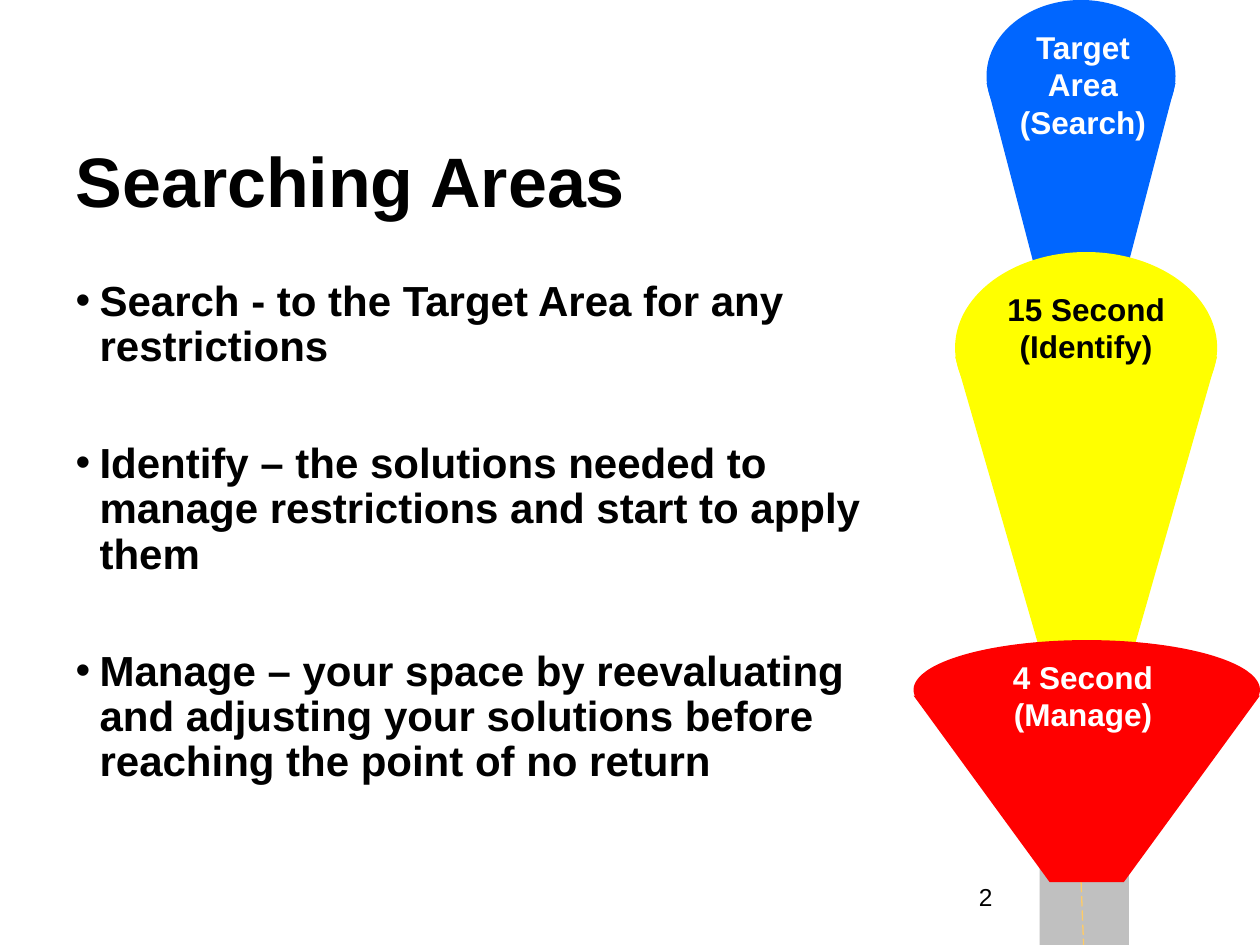
import pptx
import pptx.dml.color
import pptx.enum.dml
import pptx.enum.shapes
import pptx.enum.text
import pptx.oxml.ns
import pptx.util
from lxml import etree
from pptx.util import Inches

RGBColor = pptx.dml.color.RGBColor
BLACK = RGBColor(0x00, 0x00, 0x00)
WHITE = RGBColor(0xFF, 0xFF, 0xFF)
BLUE = RGBColor(0x00, 0x66, 0xFF)
YELLOW = RGBColor(0xFF, 0xFF, 0x00)
RED = RGBColor(0xFF, 0x00, 0x00)
ROAD_GRAY = RGBColor(0xC0, 0xC0, 0xC0)
LANE_ORANGE = RGBColor(0xFF, 0xCC, 0x66)

SHAPE = pptx.enum.shapes.MSO_SHAPE
ALIGN = pptx.enum.text.PP_ALIGN
qn = pptx.oxml.ns.qn


class SlideBuilder:
    font_name = "Arial"

    def __init__(self, page):
        self.page = page

    def place(self, box, left, top, width, height):
        box.left, box.top = Inches(left), Inches(top)
        box.width, box.height = Inches(width), Inches(height)
        frame = box.text_frame
        frame.word_wrap = True
        frame.auto_size = pptx.enum.text.MSO_AUTO_SIZE.NONE
        frame.vertical_anchor = pptx.enum.text.MSO_ANCHOR.TOP
        return frame

    def style(self, para, size, color=BLACK, bold=True, align=ALIGN.LEFT):
        para.alignment = align
        para.font.name = self.font_name
        para.font.size = pptx.util.Pt(size)
        para.font.bold = bold
        para.font.color.rgb = color

    def title(self, text, *place):
        frame = self.place(self.page.shapes.title, *place)
        frame.text = text
        self.style(frame.paragraphs[0], 40)

    def bullets(self, items, *place):
        frame = self.place(self.page.placeholders[1], *place)
        for index, item in enumerate(items):
            para = frame.paragraphs[0] if index == 0 else frame.add_paragraph()
            para.text = item
            properties = para._p.get_or_add_pPr()
            properties.set("marL", str(Inches(0.19)))
            properties.set("indent", str(Inches(-0.19)))
            etree.SubElement(properties, qn("a:buFont"), typeface=self.font_name)
            etree.SubElement(properties, qn("a:buChar"), char="•")
            para.line_spacing = 0.9
            para.space_before = pptx.util.Pt(41 if index else 0)
            self.style(para, 24)

    def text(self, text, size, color, bold, align, *place):
        box = self.page.shapes.add_textbox(0, 0, 0, 0)
        frame = self.place(box, *place)
        frame.text = text
        self.style(frame.paragraphs[0], size, color, bold, align)

    def paint(self, shape, color):
        shape.shadow.inherit = False
        shape.fill.solid()
        shape.fill.fore_color.rgb = color
        shape.line.fill.background()

    def shape(self, kind, color, *place):
        shape = self.page.shapes.add_shape(kind, *map(Inches, place))
        self.paint(shape, color)

    def polygon(self, points, color):
        start, *others = [(Inches(x), Inches(y)) for x, y in points]
        builder = self.page.shapes.build_freeform(*start)
        builder.add_line_segments(others, close=True)
        self.paint(builder.convert_to_shape(), color)

    def dashed_line(self, color, *ends):
        line = self.page.shapes.add_connector(
            pptx.enum.shapes.MSO_CONNECTOR.STRAIGHT, *map(Inches, ends))
        line.line.color.rgb = color
        line.line.width = pptx.util.Pt(0.75)
        line.line.dash_style = pptx.enum.dml.MSO_LINE.LONG_DASH
        etree.SubElement(line._element.spPr, qn("a:effectLst"))

    def cone(self, dome, shoulder, base, color, label, label_color, label_place):
        left, top, width, height = dome
        base_left, base_right, bottom = base
        self.shape(SHAPE.OVAL, color, left, top, width, height)
        self.polygon([(left, shoulder), (base_left, bottom),
                      (base_right, bottom), (left + width, shoulder)], color)
        self.text(label, 18, label_color, True, ALIGN.CENTER, *label_place)


def main():
    deck = pptx.Presentation()
    deck.slide_width, deck.slide_height = Inches(10), Inches(7.5)
    slide = SlideBuilder(deck.slides.add_slide(deck.slide_layouts[1]))

    slide.title("Searching Areas", 0.5, 1.04, 6.33, 0.77)
    slide.bullets([
        "Search - to the Target Area for any restrictions",
        "Identify – the solutions needed to manage restrictions and start to apply them",
        "Manage – your space by reevaluating and adjusting your solutions before "
        "reaching the point of no return",
    ], 0.5, 2.17, 6.75, 4.42)
    slide.text("2", 14, BLACK, False, ALIGN.LEFT, 7.67, 6.95, 2.33, 0.4)

    slide.cone((7.83, 0, 1.5, 1.21), 0.66, (8.42, 8.74, 2.92), BLUE,
               "Target Area (Search)", WHITE, (7.92, 0.17, 1.35, 1.01))
    slide.shape(SHAPE.RECTANGLE, ROAD_GRAY, 8.25, 6.75, 0.71, 0.75)
    slide.dashed_line(LANE_ORANGE, 8.58, 7, 8.6, 7.5)
    slide.cone((7.58, 2, 2.08, 1.52), 2.83, (8.4, 8.85, 5.67), YELLOW,
               "15 Second (Identify)", BLACK, (7.83, 2.25, 1.58, 0.7))
    slide.cone((7.25, 5.08, 2.75, 0.79), 5.52, (8.33, 8.92, 7), RED,
               "4 Second (Manage)", WHITE, (7.92, 5.17, 1.35, 0.71))

    deck.save("out.pptx")


if __name__ == "__main__":
    main()
